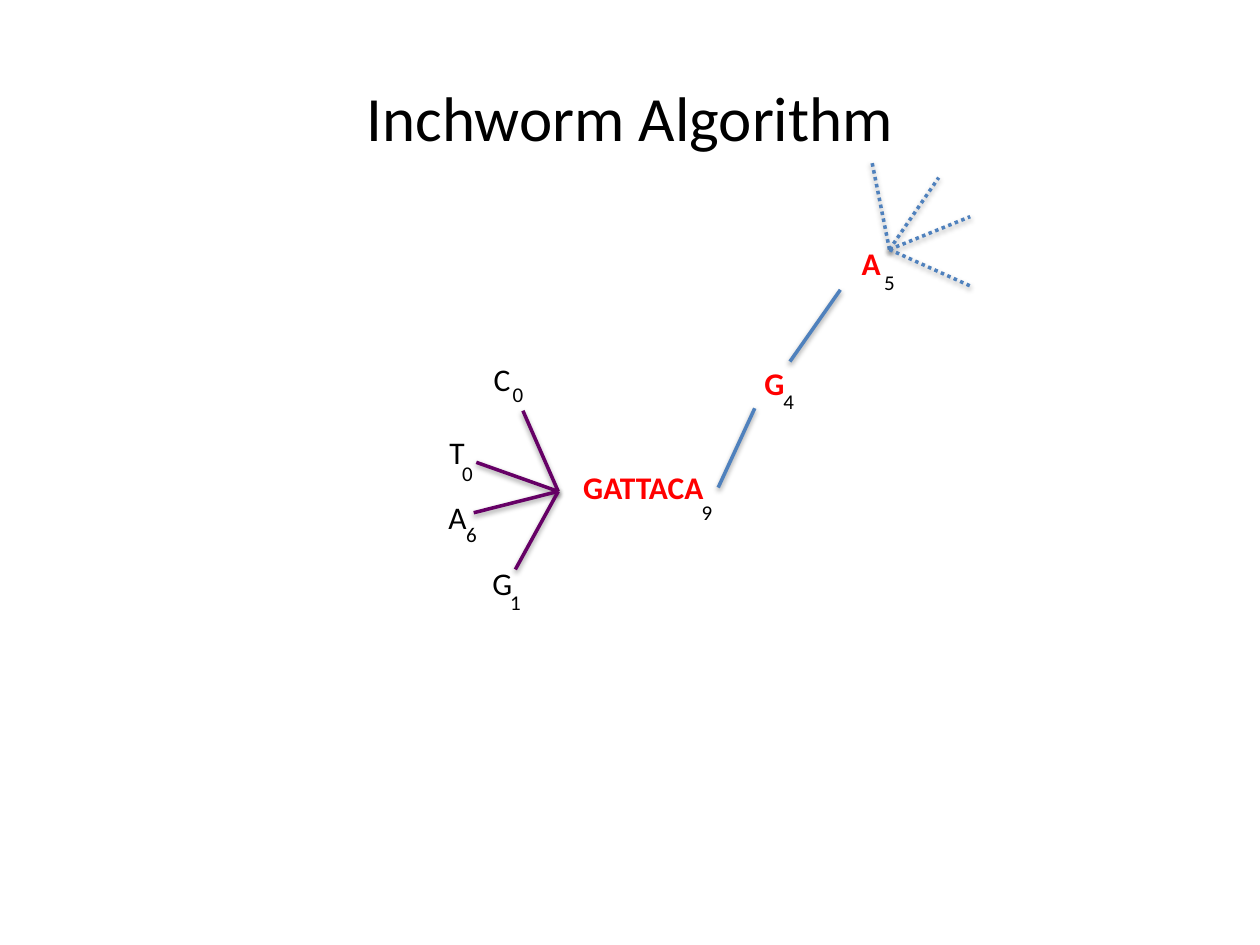
import dataclasses
import typing

import lxml.etree
import pptx
import pptx.dml.color
import pptx.enum.dml
import pptx.enum.text
import pptx.oxml.ns
import pptx.util

Pt = pptx.util.Pt
RGB = pptx.dml.color.RGBColor
Dash = pptx.enum.dml.MSO_LINE
Anchor = pptx.enum.text.MSO_ANCHOR
Align = pptx.enum.text.PP_ALIGN
AutoSize = pptx.enum.text.MSO_AUTO_SIZE
Point = tuple[float, float]


@dataclasses.dataclass(frozen=True)
class Theme:
    font: str = "Calibri"
    text: RGB = RGB(0, 0, 0)
    path_text: RGB = RGB(255, 0, 0)
    forward: RGB = RGB(0x4F, 0x81, 0xBD)
    backward: RGB = RGB(0x66, 0, 0x66)
    title_size: float = 36
    base_size: float = 18
    count_size: float = 12
    base_height: float = 28.8
    count_width: float = 20.9
    count_height: float = 21.6
    line_width: float = 2


@dataclasses.dataclass(frozen=True)
class Node:
    bases: str
    at: Point
    width: float
    count: str
    count_at: Point
    on_path: bool = False
    wrap: bool = False


@dataclasses.dataclass(frozen=True)
class Edge:
    start: Point
    end: Point


@dataclasses.dataclass(frozen=True)
class Fan:
    hub: Point
    tips: list[Point]
    color: RGB
    dash: typing.Optional[Dash] = None


THEME = Theme()

NODES = [
    Node("GATTACA", (326.2, 264.2), 84.2, "9", (393.8, 282.2), on_path=True),
    Node("G", (429.8, 204.5), 25.9, "4", (440.6, 218.2), on_path=True),
    Node("A", (485.3, 136.1), 25.9, "5", (498.2, 150.5), on_path=True),
    Node("G", (274.3, 319), 25.9, "1", (284.4, 333.4)),
    Node("A", (249.1, 280.8), 25.2, "6", (259.2, 294.5)),
    Node("T", (249.8, 244.1), 28.8, "0", (257, 259.9), wrap=True),
    Node("C", (275, 202.3), 24.5, "0", (285.8, 214.6)),
]

EDGES = [
    Edge((410.4, 278.6), (431.3, 233.3)),
    Edge((451.4, 206.6), (480.2, 165.6)),
]

FANS = [
    Fan((508.3, 142.6),
        [(498.2, 92.2), (536.4, 101.5), (554.4, 123.8), (554.4, 163.4)],
        THEME.forward, Dash.ROUND_DOT),
    Fan((319, 280.8),
        [(298.8, 234.7), (272.2, 264.2), (270.7, 293), (294.5, 325.4)],
        THEME.backward),
]


def apply(target: typing.Any, formats: dict[str, typing.Any]) -> None:
    for name, value in formats.items():
        setattr(target, name, value)


def add_shadow(sp: typing.Any) -> None:
    qn = pptx.oxml.ns.qn
    effects = lxml.etree.SubElement(sp._element.spPr, qn("a:effectLst"))
    shadow = lxml.etree.SubElement(
        effects, qn("a:outerShdw"), blurRad=str(Pt(3.1)), dist=str(Pt(1.6)),
        dir="5400000", rotWithShape="0")
    color = lxml.etree.SubElement(shadow, qn("a:srgbClr"), val="000000")
    lxml.etree.SubElement(color, qn("a:alpha"), val="38000")


def add_line(shapes: typing.Any, edge: Edge, color: RGB,
             dash: typing.Optional[Dash] = None) -> None:
    ends = [Pt(v) for v in (*edge.start, *edge.end)]
    sp = shapes.add_connector(pptx.enum.shapes.MSO_CONNECTOR.STRAIGHT, *ends)
    sp.line.color.rgb = color
    apply(sp.line, {"width": Pt(THEME.line_width), "dash_style": dash})
    add_shadow(sp)


def add_fan(shapes: typing.Any, fan: Fan) -> None:
    group = shapes.add_group_shape()
    for tip in fan.tips:
        add_line(group.shapes, Edge(fan.hub, tip), fan.color, fan.dash)


def add_text(shapes: typing.Any, text: str, at: Point, size: Point,
             font_size: float, color: RGB = THEME.text, bold: bool = False,
             align: Align = Align.LEFT,
             frame: typing.Optional[dict[str, typing.Any]] = None) -> None:
    sp = shapes.add_textbox(*(Pt(v) for v in (*at, *size)))
    tf = sp.text_frame
    apply(tf, {"word_wrap": False, "auto_size": AutoSize.SHAPE_TO_FIT_TEXT,
               **(frame or {})})
    p = tf.paragraphs[0]
    p.alignment = align
    r = p.add_run()
    r.text = text
    apply(r.font, {"name": THEME.font, "size": Pt(font_size), "bold": bold})
    r.font.color.rgb = color


def add_node(shapes: typing.Any, node: Node) -> None:
    add_text(shapes, node.bases, node.at, (node.width, THEME.base_height),
             THEME.base_size, THEME.path_text if node.on_path else THEME.text,
             node.on_path, frame={"word_wrap": node.wrap})
    add_text(shapes, node.count, node.count_at,
             (THEME.count_width, THEME.count_height), THEME.count_size)


def main() -> None:
    prs = pptx.Presentation()
    apply(prs, {"slide_width": Pt(720), "slide_height": Pt(540)})
    s = prs.slides.add_slide(prs.slide_layouts[6])
    for edge in EDGES:
        add_line(s.shapes, edge, THEME.forward)
    for fan in FANS:
        add_fan(s.shapes, fan)
    for node in NODES:
        add_node(s.shapes, node)
    add_text(s.shapes, "Inchworm Algorithm", (36, 21.6), (648, 90),
             THEME.title_size, align=Align.CENTER,
             frame={"word_wrap": True, "auto_size": AutoSize.NONE,
                    "vertical_anchor": Anchor.MIDDLE})
    prs.save("out.pptx")


if __name__ == "__main__":
    import pptx.enum.shapes
    main()
